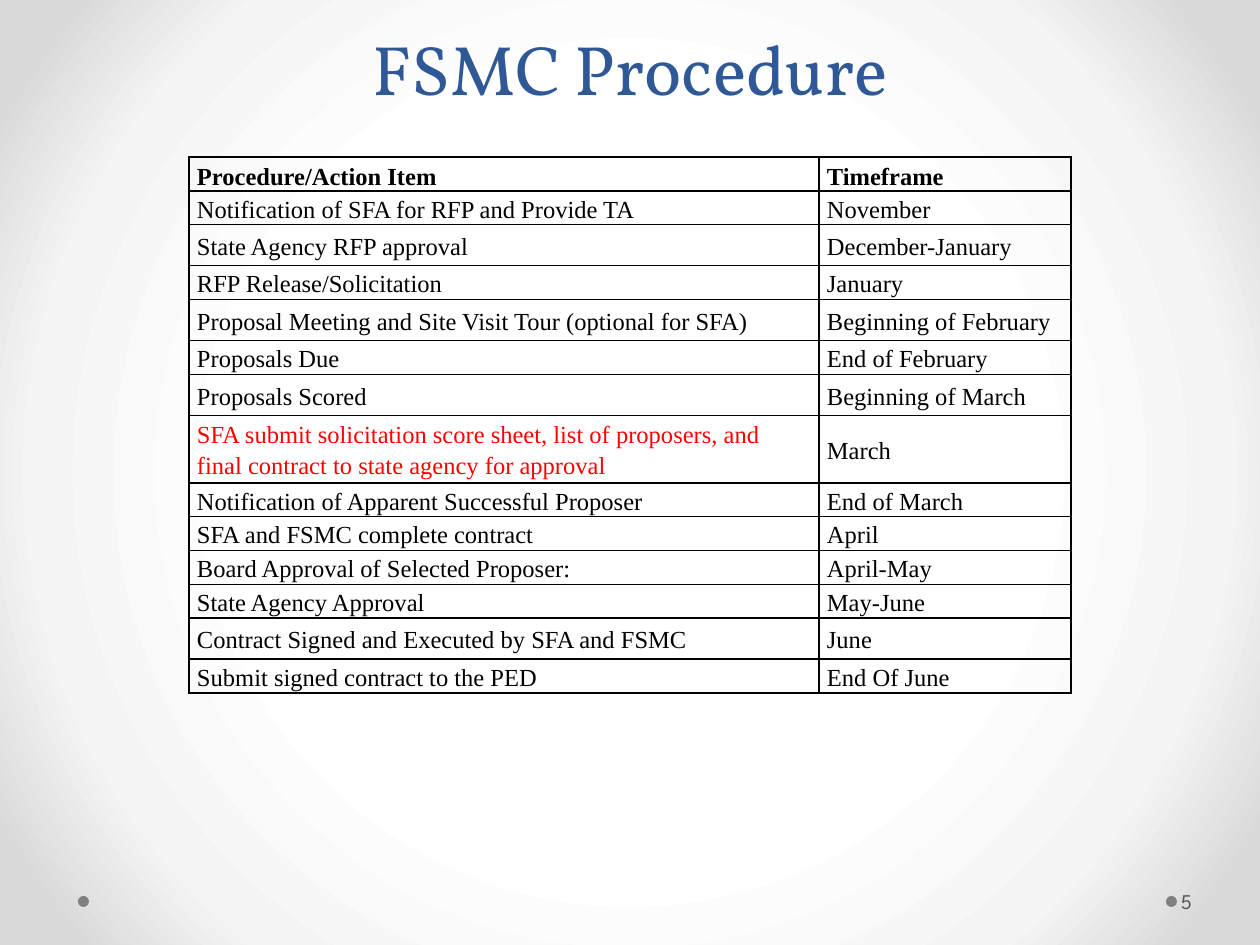
from lxml import etree
from pptx import Presentation, util as u
from pptx.dml.color import RGBColor
from pptx.enum import shapes, text
from pptx.oxml import parse_xml
from pptx.oxml.ns import nsdecls

PX = 914400 // 126
BLUE = RGBColor(0x2F, 0x58, 0x97)
BLACK = RGBColor(0, 0, 0)
RED = RGBColor(255, 0, 0)
GRAY = RGBColor(0x59, 0x59, 0x59)
DOT = RGBColor(0x80, 0x80, 0x80)
GLOW = [(50, "FFFFFF"), (76, "F4F4F4"), (92, "DADADA")]

SHORT, TALL = 20, 41
COLS = (630, 252)
ROWS = [
    ("Procedure/Action Item", "Timeframe", SHORT),
    ("Notification of SFA for RFP and Provide TA", "November", SHORT),
    ("State Agency RFP approval", "December-January", TALL),
    ("RFP Release/Solicitation", "January", SHORT),
    ("Proposal Meeting and Site Visit Tour (optional for SFA)",
     "Beginning of February", TALL),
    ("Proposals Due", "End of February", SHORT),
    ("Proposals Scored", "Beginning of March", TALL),
    ("SFA submit solicitation score sheet, list of proposers, and final "
     "contract to state agency for approval", "March", TALL),
    ("Notification of Apparent Successful Proposer", "End of March", SHORT),
    ("SFA and FSMC complete contract", "April", SHORT),
    ("Board Approval of Selected Proposer:", "April-May", SHORT),
    ("State Agency Approval", "May-June", SHORT),
    ("Contract Signed and Executed by SFA and FSMC", "June", TALL),
    ("Submit signed contract to the PED", "End Of June", SHORT),
]
HOT = (7, 0)  # row and column of the red cell


def px(*vals):
    return [u.Emu(v * PX) for v in vals]


def write(frame, words, font, size, color, bold=False, align=None, gap=None):
    par = frame.paragraphs[0]
    par.alignment = align
    par.line_spacing = gap
    run = par.add_run()
    run.text = words
    run.font.name, run.font.size = font, u.Pt(size)
    run.font.bold, run.font.color.rgb = bold, color


def add_box(slide, place, anchor, pads):
    frame = slide.shapes.add_textbox(*px(*place)).text_frame
    frame.word_wrap = True
    frame.vertical_anchor = anchor
    (frame.margin_left, frame.margin_top,
     frame.margin_right, frame.margin_bottom) = px(*pads)
    return frame


def add_glow(slide):
    """Fill the background with a radial gradient from the centre."""
    fill = slide.background.fill
    fill.gradient()
    stops = "".join(f'<a:gs pos="{pos * 1000}"><a:srgbClr val="{hue}"/></a:gs>'
                    for pos, hue in GLOW)
    new = parse_xml(
        f'<a:gradFill {nsdecls("a")} rotWithShape="1"><a:gsLst>{stops}</a:gsLst>'
        '<a:path path="circle"><a:fillToRect l="50000" t="50000" r="50000" '
        'b="50000"/></a:path></a:gradFill>')
    old = next(slide.element.iter("{*}gradFill"))
    old.getparent().replace(old, new)


def add_dot(slide, left):
    dot = slide.shapes.add_shape(shapes.MSO_SHAPE.OVAL, *px(left, 896, 11, 11))
    dot.shadow.inherit = False
    dot.fill.solid()
    dot.fill.fore_color.rgb = DOT
    dot.line.fill.background()


def add_edges(cell):
    props = cell._tc.get_or_add_tcPr()
    for spot, side in enumerate(("lnL", "lnR", "lnT", "lnB")):
        props.insert(spot, parse_xml(
            f'<a:{side} {nsdecls("a")} w="12700"><a:solidFill>'
            f'<a:srgbClr val="{BLACK}"/></a:solidFill></a:{side}>'))


def add_grid(slide):
    place = px(189, 157, sum(COLS), 517)
    shape = slide.shapes.add_table(len(ROWS), len(COLS), *place)
    table = shape.table
    table.first_row = table.horz_banding = False
    for col, wide in zip(table.columns, COLS):
        col.width = u.Emu(wide * PX)
    for r, (*words, high) in enumerate(ROWS):
        table.rows[r].height = u.Emu(high * PX)
        for c, word in enumerate(words):
            cell = table.cell(r, c)
            cell.fill.background()
            add_edges(cell)
            cell.margin_left = cell.margin_right = u.Emu(8 * PX)
            cell.margin_top = cell.margin_bottom = 0
            cell.vertical_anchor = (text.MSO_ANCHOR.MIDDLE if r
                                    else text.MSO_ANCHOR.BOTTOM)
            write(cell.text_frame, word, "Times New Roman", 14,
                  RED if (r, c) == HOT else BLACK, bold=r == 0, gap=1.15)
    shape.height = place[3]


def main():
    deck = Presentation()
    deck.slide_width, deck.slide_height = u.Inches(10), u.Inches(7.5)
    slide = deck.slides.add_slide(deck.slide_layouts[6])
    add_glow(slide)
    for left in (1166, 78):
        add_dot(slide, left)
    title = add_box(slide, (63, 10, 1134, 105), text.MSO_ANCHOR.BOTTOM,
                    (12, 6, 12, 6))
    write(title, "FSMC Procedure", "Vollkorn", 40, BLUE,
          align=text.PP_ALIGN.CENTER, gap=u.Pt(58))
    number = add_box(slide, (1177, 876, 77, 50), text.MSO_ANCHOR.MIDDLE,
                     (4, 6, 6, 6))
    write(number, "5", "League Spartan", 12, GRAY)
    add_grid(slide)
    deck.save("out.pptx")


if __name__ == "__main__":
    main()
